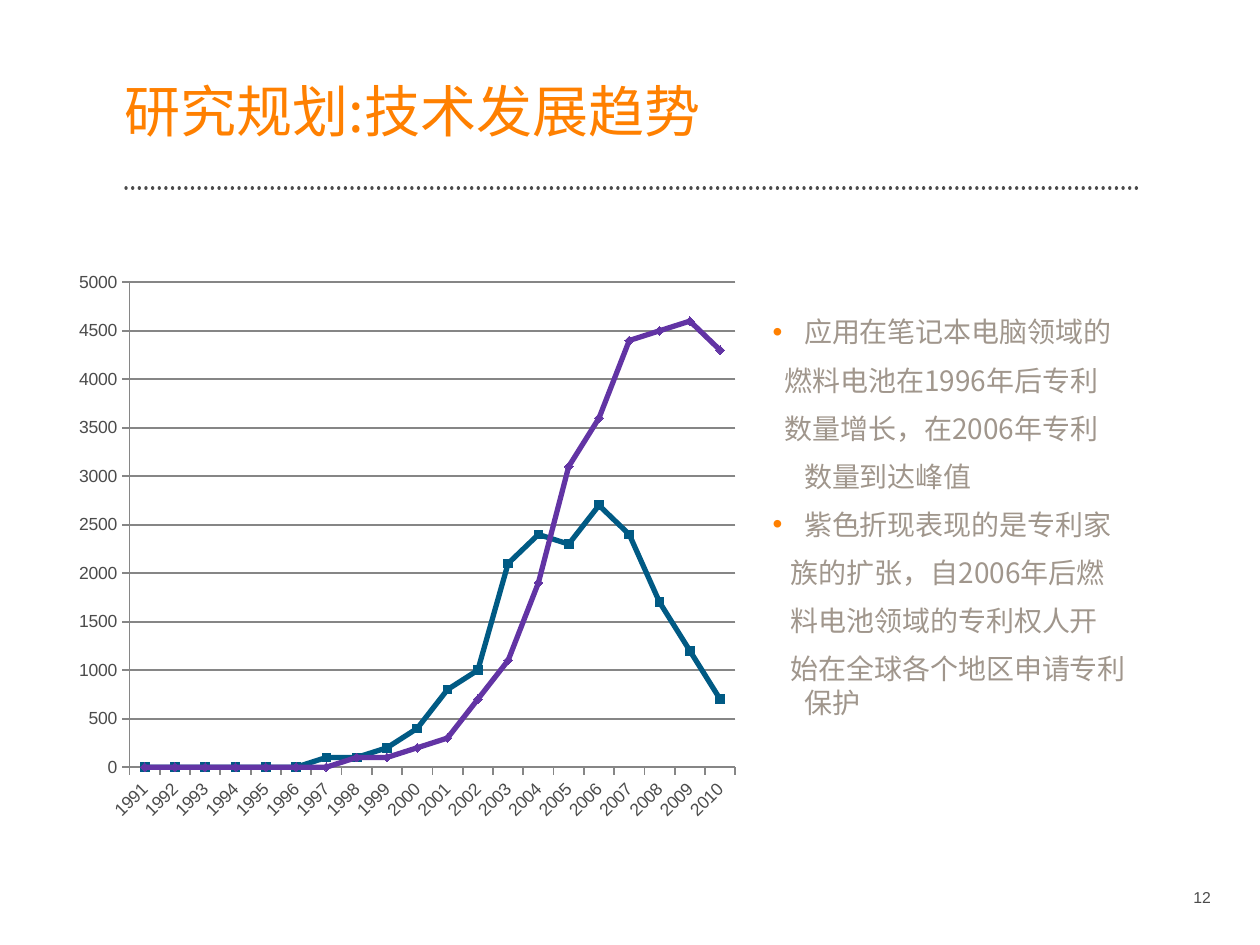
from lxml import etree
from pptx import Presentation
from pptx import util as u
from pptx.chart import data
from pptx.dml import color
from pptx.enum import chart as charts, dml, shapes, text
from pptx.oxml import ns

COLORS = {"orange": "FF8000", "dark": "4B4B4B", "taupe": "A0968C",
          "grid": "868686", "blue": "005A84", "purple": "6234A4"}
LATIN = "Arial"
CHINESE = "Noto Sans CJK SC"

YEARS = [str(year) for year in range(1991, 2011)]
BLUE_VALUES = [0, 0, 0, 0, 0, 0, 100, 100, 200, 400, 800, 1000, 2100, 2400,
               2300, 2700, 2400, 1700, 1200, 700]
PURPLE_VALUES = [0, 0, 0, 0, 0, 0, 0, 100, 100, 200, 300, 700, 1100, 1900,
                 3100, 3600, 4400, 4500, 4600, 4300]
SERIES = [("Series 1", BLUE_VALUES, "blue", charts.XL_MARKER_STYLE.SQUARE),
          ("Series 2", PURPLE_VALUES, "purple", charts.XL_MARKER_STYLE.DIAMOND)]

FINDINGS = [
    ("应用在笔记本电脑领域的", -18, True),
    ("燃料电池在1996年后专利", -11, False),
    ("数量增长，在2006年专利", -11, False),
    ("数量到达峰值", 0, False),
    ("紫色折现表现的是专利家", -18, True),
    ("族的扩张，自2006年后燃", -7.5, False),
    ("料电池领域的专利权人开", -7.5, False),
    ("始在全球各个地区申请专利保护", -7.5, False),
]


def rgb(name):
    return color.RGBColor.from_string(COLORS[name])


def add_xml(parent, tag, **attributes):
    return etree.SubElement(parent, ns.qn(tag), attributes)


class TrendSlide:
    def __init__(self, presentation):
        self.slide = presentation.slides.add_slide(presentation.slide_layouts[1])

    def place(self, shape, left, top, width, height):
        shape.left, shape.top = u.Pt(left), u.Pt(top)
        shape.width, shape.height = u.Pt(width), u.Pt(height)

    def frame(self, shape, anchor, right=0):
        frame = shape.text_frame
        frame.word_wrap = True
        frame.auto_size = text.MSO_AUTO_SIZE.NONE
        frame.vertical_anchor = anchor
        frame.margin_left = frame.margin_top = frame.margin_bottom = 0
        frame.margin_right = u.Pt(right)
        return frame

    def format(self, paragraph, font_name, size, color_name):
        for run in paragraph.runs:
            run.font.size = u.Pt(size)
            run.font.color.rgb = rgb(color_name)
            run.font.name = font_name
            add_xml(run.font._element, "a:ea", typeface=font_name)

    def indent(self, paragraph, margin, first):
        properties = paragraph._p.get_or_add_pPr()
        properties.set("marL", str(u.Pt(margin)))
        properties.set("indent", str(u.Pt(first)))
        return properties

    def title(self, words, box):
        shape = self.slide.shapes.title
        self.place(shape, *box)
        frame = self.frame(shape, text.MSO_ANCHOR.BOTTOM)
        frame.text = words
        paragraph = frame.paragraphs[0]
        paragraph.alignment = text.PP_ALIGN.LEFT
        paragraph.line_spacing = 0.9
        self.indent(paragraph, 7, 0)
        self.format(paragraph, CHINESE, 32, "orange")

    def body(self, lines, box):
        shape = self.slide.placeholders[1]
        self.place(shape, *box)
        frame = self.frame(shape, text.MSO_ANCHOR.TOP, right=14.4)
        frame.text = "\n".join(words for words, _, _ in lines)
        for index, (paragraph, line) in enumerate(zip(frame.paragraphs, lines)):
            _, first, bulleted = line
            properties = self.indent(paragraph, 18, first)
            if bulleted:
                bullet_color = add_xml(properties, "a:buClr")
                add_xml(bullet_color, "a:srgbClr", val=COLORS["orange"])
                add_xml(properties, "a:buFont", typeface=LATIN)
                add_xml(properties, "a:buChar", char="•")
            else:
                add_xml(properties, "a:buNone")
            paragraph.line_spacing = 1.0
            paragraph.space_before = u.Pt(8.3 if index else 0)
            self.format(paragraph, CHINESE, 16, "taupe")

    def rule(self, left, right, top):
        line = self.slide.shapes.add_connector(
            shapes.MSO_CONNECTOR.STRAIGHT, u.Pt(left), u.Pt(top), u.Pt(right), u.Pt(top))
        line.line.color.rgb = rgb("dark")
        line.line.width = u.Pt(1.9)
        line.line.dash_style = dml.MSO_LINE.ROUND_DOT
        line._element.spPr.find(ns.qn("a:ln")).set("cap", "rnd")
        add_xml(line._element.spPr, "a:effectLst")

    def page_number(self, number, box):
        shape = self.slide.shapes.add_textbox(*map(u.Pt, box))
        shape.text_frame.word_wrap = True
        shape.text_frame.text = number
        paragraph = shape.text_frame.paragraphs[0]
        paragraph.alignment = text.PP_ALIGN.RIGHT
        self.format(paragraph, LATIN, 9, "dark")

    def line_chart(self, categories, series_list, box):
        chart_data = data.CategoryChartData()
        chart_data.categories = categories
        for name, values, _, _ in series_list:
            chart_data.add_series(name, values)
        chart = self.slide.shapes.add_chart(
            charts.XL_CHART_TYPE.LINE_MARKERS, *map(u.Pt, box), chart_data).chart
        chart.has_legend = chart.has_title = False
        chart.font.size = u.Pt(10)
        chart.font.name = LATIN
        chart.font.color.rgb = rgb("dark")
        chart.plots[0].vary_by_categories = False
        for series, (_, _, color_name, marker) in zip(chart.plots[0].series, series_list):
            series.smooth = False
            series.format.line.color.rgb = rgb(color_name)
            series.format.line.width = u.Pt(3)
            series.marker.style = marker
            series.marker.size = 5
            series.marker.format.fill.solid()
            series.marker.format.fill.fore_color.rgb = rgb(color_name)
            series.marker.format.line.color.rgb = rgb(color_name)
        self.axes(chart)
        self.plot_area(chart, x=0.09, y=0.04, w=0.89, h=0.85)

    def axes(self, chart):
        values, years = chart.value_axis, chart.category_axis
        values.minimum_scale, values.maximum_scale, values.major_unit = 0, 5000, 500
        values.has_major_gridlines = True
        for part in (values, years, values.major_gridlines):
            part.format.line.color.rgb = rgb("grid")
            part.format.line.width = u.Pt(1)
        for axis in (values, years):
            axis.major_tick_mark = charts.XL_TICK_MARK.OUTSIDE
            axis.tick_labels.font.size = u.Pt(10)
            axis.tick_labels.font.color.rgb = rgb("dark")
        years._element.txPr.find(ns.qn("a:bodyPr")).set("rot", "-2700000")

    def plot_area(self, chart, **fractions):
        area = chart._chartSpace.chart.plotArea
        for old in area.findall(ns.qn("c:layout")):
            area.remove(old)
        layout = etree.Element(ns.qn("c:layout"))
        area.insert(0, layout)
        manual = add_xml(layout, "c:manualLayout")
        add_xml(manual, "c:layoutTarget", val="inner")
        for side in "xy":
            add_xml(manual, f"c:{side}Mode", val="edge")
        for side, fraction in fractions.items():
            add_xml(manual, f"c:{side}", val=str(fraction))


def main():
    presentation = Presentation()
    presentation.slide_width, presentation.slide_height = u.Pt(720), u.Pt(540)
    slide = TrendSlide(presentation)
    slide.rule(72, 652, 107.5)
    slide.title("研究规划:技术发展趋势", (64, 17, 580, 65.5))
    slide.page_number("12", (663, 503.5, 36, 18))
    slide.line_chart(YEARS, SERIES, (39, 148.3, 389, 326))
    slide.body(FINDINGS, (441.5, 180, 222, 255))
    presentation.save("out.pptx")


if __name__ == "__main__":
    main()
